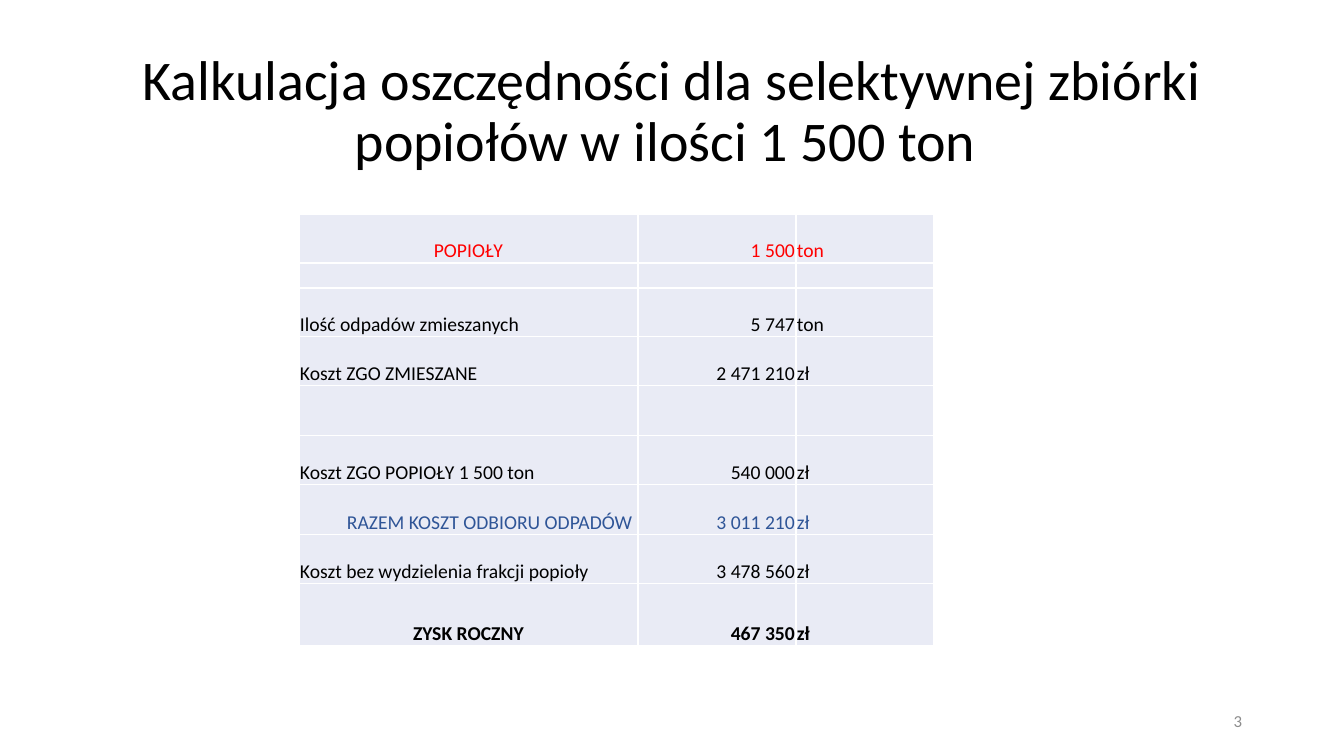
from dataclasses import dataclass
from itertools import product

from lxml.etree import SubElement
from pptx import Presentation
from pptx.dml.color import RGBColor
from pptx.enum.text import MSO_ANCHOR, PP_ALIGN
from pptx.oxml import parse_xml
from pptx.oxml.ns import nsdecls, qn
from pptx.slide import Slide
from pptx.table import _Cell
from pptx.text.text import _Paragraph
from pptx.util import Emu, Pt

SLIDE_WIDTH, SLIDE_HEIGHT = 1344, 756
EMU_PER_PX = 12192000 / SLIDE_WIDTH

BLACK = RGBColor(0x00, 0x00, 0x00)
WHITE = RGBColor(0xFF, 0xFF, 0xFF)
RED = RGBColor(0xFF, 0x00, 0x00)
BLUE = RGBColor(0x2F, 0x55, 0x97)
GRAY = RGBColor(0x8C, 0x8C, 0x8C)
CELL_FILL = RGBColor(0xE9, 0xEB, 0xF5)

FONT = "Calibri"
TABLE_SIZE = Pt(14)
TABLE_LEFT, TABLE_TOP = 299, 214
COLUMN_WIDTHS = (339, 158, 138)
LEFT, CENTER, RIGHT = PP_ALIGN.LEFT, PP_ALIGN.CENTER, PP_ALIGN.RIGHT


@dataclass(frozen=True)
class Label:
    text: str
    left: int
    top: int
    width: int
    height: int
    size: int
    color: RGBColor
    align: PP_ALIGN
    line_spacing: float = 1.0


@dataclass(frozen=True)
class CostRow:
    height: int
    name: str = ""
    amount: str = ""
    unit: str = ""
    align: PP_ALIGN = LEFT
    color: RGBColor = BLACK
    bold: bool = False


LABELS = (
    Label("Kalkulacja oszczędności dla selektywnej zbiórki popiołów w ilości 1 500 ton ",
          92, 40, 1159, 146, 40, BLACK, CENTER, 0.9),
    Label("3", 950, 701, 302, 40, 12, GRAY, RIGHT),
)

COST_ROWS = (
    CostRow(49, "POPIOŁY", "1 500", "ton", CENTER, RED),
    CostRow(25),
    CostRow(49, "Ilość odpadów zmieszanych", "5 747", "ton"),
    CostRow(49, "Koszt ZGO ZMIESZANE", "2 471 210", "zł"),
    CostRow(50),
    CostRow(49, "Koszt ZGO POPIOŁY 1 500 ton", "540 000", "zł"),
    CostRow(50, "RAZEM KOSZT ODBIORU ODPADÓW ", "3 011 210", "zł", RIGHT, BLUE),
    CostRow(49, "Koszt bez wydzielenia frakcji popioły", "3 478 560", "zł"),
    CostRow(62, "ZYSK ROCZNY", "467 350", "zł", CENTER, bold=True),
)


def px(length: int) -> Emu:
    return Emu(round(length * EMU_PER_PX))


def apply_format(target: object, values: dict[str, object]) -> None:
    for name, value in values.items():
        setattr(target, name, value)


def write_text(para: _Paragraph, text: str, size: Pt, color: RGBColor, bold: bool = False) -> None:
    span = para.add_run()
    span.text = text
    apply_format(span.font, {"name": FONT, "size": size, "bold": bold})
    span.font.color.rgb = color


def add_label(page: Slide, label: Label) -> None:
    box = page.shapes.add_textbox(px(label.left), px(label.top), px(label.width), px(label.height))
    apply_format(box.text_frame, {"word_wrap": True, "vertical_anchor": MSO_ANCHOR.MIDDLE})
    para = box.text_frame.paragraphs[0]
    apply_format(para, {"alignment": label.align, "line_spacing": label.line_spacing})
    write_text(para, label.text, Pt(label.size), label.color)


def style_cell(cell: _Cell) -> None:
    apply_format(cell, {"margin_left": px(1), "margin_right": px(1), "margin_top": px(1),
                        "margin_bottom": 0, "vertical_anchor": MSO_ANCHOR.BOTTOM})
    properties = cell._tc.get_or_add_tcPr()
    for side in ("lnL", "lnR", "lnT", "lnB"):
        properties.append(parse_xml(
            f'<a:{side} {nsdecls("a")} w="{Pt(1)}"><a:solidFill>'
            f'<a:srgbClr val="{WHITE}"/></a:solidFill></a:{side}>'))
    cell.fill.solid()
    cell.fill.fore_color.rgb = CELL_FILL


def add_cost_table(page: Slide) -> None:
    width = sum(COLUMN_WIDTHS)
    height = sum(row.height for row in COST_ROWS)
    table = page.shapes.add_table(len(COST_ROWS), len(COLUMN_WIDTHS), px(TABLE_LEFT),
                                  px(TABLE_TOP), px(width), px(height)).table
    apply_format(table, {"first_row": False, "horz_banding": False})
    for column, column_width in zip(table.columns, COLUMN_WIDTHS):
        column.width = px(column_width)
    for table_row, row in zip(table.rows, COST_ROWS):
        table_row.height = px(row.height)
    for (row_index, row), column_index in product(enumerate(COST_ROWS), range(len(COLUMN_WIDTHS))):
        cell = table.cell(row_index, column_index)
        style_cell(cell)
        para = cell.text_frame.paragraphs[0]
        text = (row.name, row.amount, row.unit)[column_index]
        if text:
            para.alignment = (row.align, RIGHT, LEFT)[column_index]
            write_text(para, text, TABLE_SIZE, row.color, row.bold)
        else:
            SubElement(para._p, qn("a:endParaRPr"), sz=str(int(TABLE_SIZE.pt * 100)))


def main() -> None:
    deck = Presentation()
    apply_format(deck, {"slide_width": px(SLIDE_WIDTH), "slide_height": px(SLIDE_HEIGHT)})
    page = deck.slides.add_slide(deck.slide_layouts[6])
    for label in LABELS:
        add_label(page, label)
    add_cost_table(page)
    deck.save("out.pptx")


if __name__ == "__main__":
    main()
